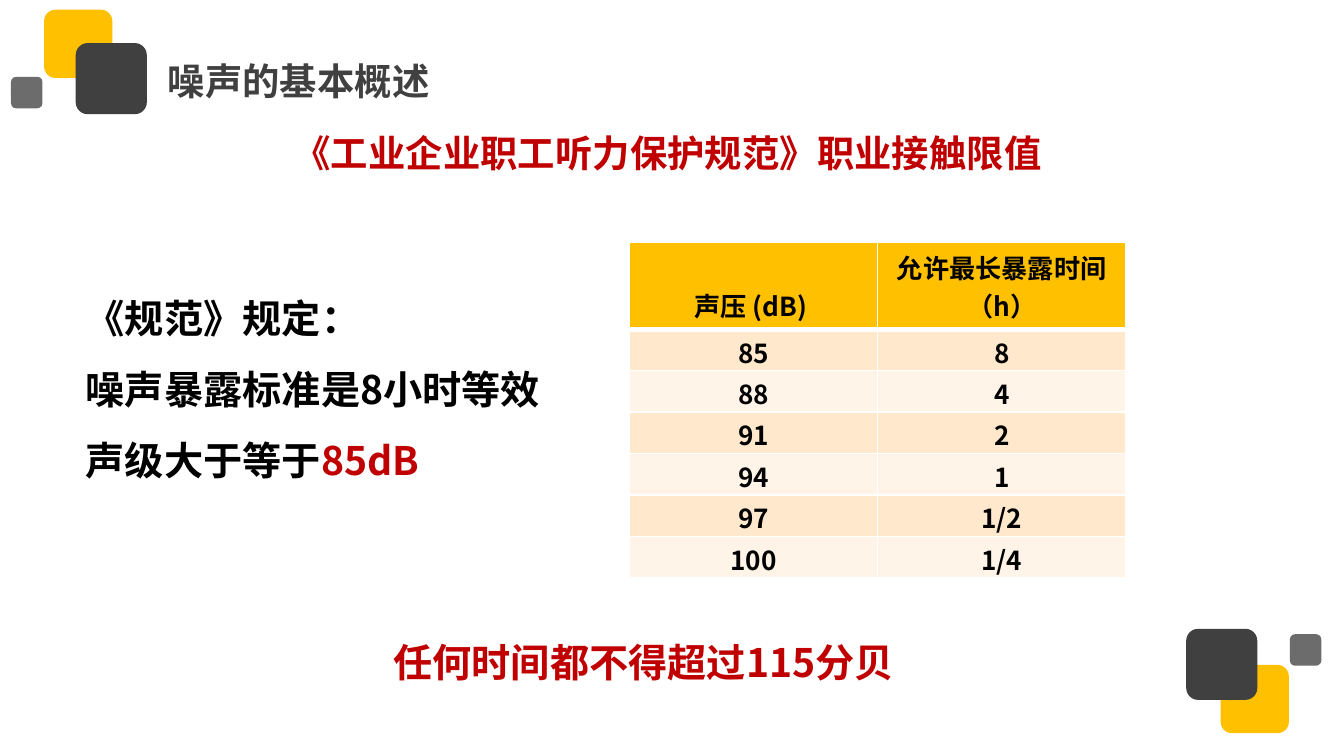
from dataclasses import dataclass

from lxml import etree
from pptx import Presentation
from pptx import util as u
from pptx.dml.color import RGBColor
from pptx.enum import shapes, text
from pptx.oxml import ns

Pt = u.Pt


@dataclass(frozen=True)
class Theme:
    """Colours, font and type sizes of the slide."""
    font: str = "Noto Sans CJK SC"
    yellow: str = "FFC000"
    dark: str = "404040"
    red: str = "C00000"
    black: str = "000000"
    line: str = "FFFFFF"
    bands: tuple = ("FFE8CC", "FFF4E7")
    heading: int = 20
    body: int = 21
    cell: int = 14


THEME = Theme()
LIMITS = [("85", "8"), ("88", "4"), ("91", "2"),
          ("94", "1"), ("97", "1/2"), ("100", "1/4")]
SQUARES = [
    (23.6, 5.2, 36.6, THEME.yellow, 100),
    (40.6, 23.1, 38.1, THEME.dark, 100),
    (5.9, 41.2, 16.9, THEME.dark, 77),
    (653.9, 356.2, 36.6, THEME.yellow, 100),
    (635.5, 336.9, 38.1, THEME.dark, 100),
    (691, 339.8, 16.9, THEME.dark, 77),
]


def child(parent, tag, **attributes):
    """Append a DrawingML element and return it."""
    return etree.SubElement(parent, ns.qn(tag), **attributes)


def paint(fill, color):
    """Give a solid fill."""
    fill.solid()
    fill.fore_color.rgb = RGBColor.from_string(color)


def style(paragraph, size, color, align=None):
    """Set the bold type of a paragraph, with its East Asian font."""
    font = paragraph.font
    font.name, font.size, font.bold = THEME.font, Pt(size), True
    font.color.rgb = RGBColor.from_string(color)
    child(font._element, "a:ea", typeface=THEME.font)
    paragraph.alignment = align


def add_square(slide, left, top, side, color, opacity):
    """Draw one rounded corner square."""
    square = slide.shapes.add_shape(
        shapes.MSO_SHAPE.ROUNDED_RECTANGLE, Pt(left), Pt(top), Pt(side), Pt(side))
    square.shadow.inherit = False
    square.line.fill.background()
    paint(square.fill, color)
    if opacity < 100:
        tint = square._element.spPr.find(".//" + ns.qn("a:srgbClr"))
        child(tint, "a:alpha", val=str(opacity * 1000))


def add_text(slide, box, lines, size, color, align=None, spacing=None):
    """Add a text box with one paragraph per line and return its frame."""
    frame = slide.shapes.add_textbox(*map(Pt, box)).text_frame
    frame.word_wrap = True
    frame.auto_size = text.MSO_AUTO_SIZE.SHAPE_TO_FIT_TEXT
    frame.text = "\n".join(lines)
    for paragraph in frame.paragraphs:
        style(paragraph, size, color, align)
        paragraph.line_spacing = spacing
    return frame


def add_border(cell, side, width):
    """Draw one border of a cell."""
    edge = child(cell._tc.get_or_add_tcPr(), "a:" + side, w=str(Pt(width)))
    child(child(edge, "a:solidFill"), "a:srgbClr", val=THEME.line)


def fill_cell(cell, words, color, is_header):
    """Write and format one table cell."""
    cell.text = words
    style(cell.text_frame.paragraphs[0], THEME.cell, THEME.black, text.PP_ALIGN.CENTER)
    cell.vertical_anchor = text.MSO_ANCHOR.BOTTOM
    cell.margin_left = cell.margin_right = Pt(5)
    cell.margin_top = Pt(2.6 if is_header else 1.6)
    cell.margin_bottom = Pt(2.6 if is_header else 0)
    for side in ("lnL", "lnR", "lnT", "lnB"):
        add_border(cell, side, 3 if is_header and side == "lnB" else 1)
    paint(cell.fill, color)


def add_limits_table(slide):
    """Add the table of sound levels and exposure times."""
    rows = [("声压 (dB) ", "允许最长暴露时间 （h）"), *LIMITS]
    table = slide.shapes.add_table(
        len(rows), 2, Pt(337.2), Pt(129.8), Pt(266), Pt(179.8)).table
    for column in table.columns:
        column.width = Pt(133)
    for index, row in enumerate(rows):
        is_header = index == 0
        table.rows[index].height = Pt(46.6 if is_header else 22.2)
        color = THEME.yellow if is_header else THEME.bands[(index - 1) % 2]
        for column, words in enumerate(row):
            fill_cell(table.cell(index, column), words, color, is_header)


def main():
    """Build and save the slide."""
    deck = Presentation()
    deck.slide_width, deck.slide_height = Pt(720), Pt(405)
    slide = deck.slides.add_slide(deck.slide_layouts[6])
    for square in SQUARES:
        add_square(slide, *square)
    add_text(slide, (82.8, 27.4, 234.7, 31.7), ["噪声的基本概述"],
             THEME.heading, THEME.dark)
    add_text(slide, (0, 66.2, 720, 31.7), ["《工业企业职工听力保护规范》职业接触限值 "],
             THEME.heading, THEME.red, text.PP_ALIGN.CENTER)
    rule = add_text(slide, (38.9, 141.8, 293.8, 121.7),
                    ["《规范》规定：", "噪声暴露标准是8小时等效", "声级大于等于"],
                    THEME.body, THEME.black, spacing=1.5)
    level = rule.paragraphs[-1].add_run()
    level.text = "85dB"
    level.font.color.rgb = RGBColor.from_string(THEME.red)
    add_limits_table(slide)
    add_text(slide, (203.6, 338.4, 284.4, 32.4), ["任何时间都不得超过115分贝"],
             THEME.body, THEME.red)
    deck.save("out.pptx")


if __name__ == "__main__":
    main()
